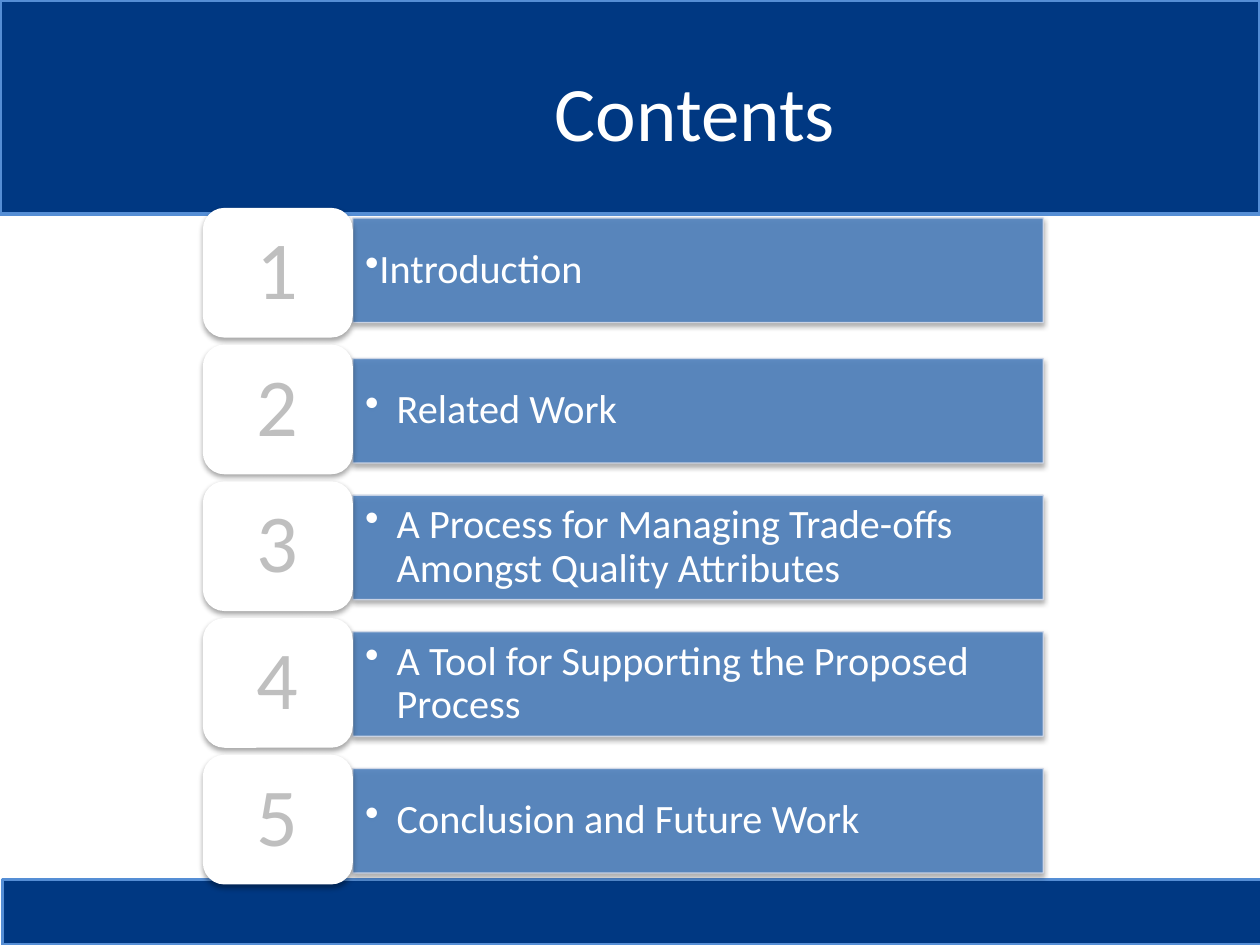
import pptx
import pptx.util
import pptx.dml.color
import pptx.enum.shapes
import pptx.enum.text
import pptx.oxml.ns
from lxml import etree

Inches = pptx.util.Inches
Pt = pptx.util.Pt
RGBColor = pptx.dml.color.RGBColor
SHAPE = pptx.enum.shapes.MSO_SHAPE
ALIGN = pptx.enum.text.PP_ALIGN
MIDDLE = pptx.enum.text.MSO_ANCHOR.MIDDLE
qn = pptx.oxml.ns.qn

NAVY = RGBColor(0x00, 0x38, 0x82)
SKY = RGBColor(0x55, 0x8E, 0xD5)
BLUE = RGBColor(0x4F, 0x81, 0xBD)
PALE = RGBColor(0xD0, 0xD8, 0xE8)
GRAY = RGBColor(0xBF, 0xBF, 0xBF)
WHITE = RGBColor(0xFF, 0xFF, 0xFF)

TITLE = "Contents"
# Topic, bullet indent, gap from the top of the tile to the top of the bar
TOPICS = [
    ("Introduction", 0, 0.08),
    ("Related Work", 0.25, 0.11),
    ("A Process for Managing Trade-offs Amongst Quality Attributes", 0.25, 0.11),
    ("A Tool for Supporting the Proposed Process", 0.25, 0.11),
    ("Conclusion and Future Work", 0.25, 0.11),
]
BANDS = [(0, 0, 10, 1.7), (0.02, 6.98, 10, 0.52)]

TILE_LEFT, TILE_TOP, TILE_WIDTH, TILE_HEIGHT = 1.61, 1.65, 1.19, 1.03
BAR_WIDTH, BAR_HEIGHT = 5.48, 0.83
PITCH = 1.085

TITLE_FONT = {"name": "Calibri", "size": Pt(44)}
BAR_FONT = {"name": "Calibri", "size": Pt(23)}
TILE_FONT = {"name": "Calibri", "size": Pt(47)}


def set_alpha(color_parent, percent):
    for color in color_parent.iter(qn("a:srgbClr")):
        etree.SubElement(color, qn("a:alpha"), val=str(percent * 1000))


def add_box(slide, kind, place, fill, line=None, width=0):
    box = slide.shapes.add_shape(kind, *[Inches(value) for value in place])
    box.fill.solid()
    box.fill.fore_color.rgb = fill
    if line is None:
        box.line.fill.background()
    else:
        box.line.color.rgb = line
        box.line.width = Pt(width)
    box.shadow.inherit = False
    return box


def add_soft_shadow(box):
    effects = box._element.spPr.find(qn("a:effectLst"))
    shadow = etree.SubElement(
        effects, qn("a:outerShdw"), blurRad=str(Pt(3.1)), dist=str(Pt(1.8)),
        dir="5400000", rotWithShape="0")
    etree.SubElement(shadow, qn("a:srgbClr"), val="000000")
    set_alpha(shadow, 35)


def write(box, text, font, color, align, side=0.1, edge=0.05, indent=None):
    """Fill a box with one paragraph, bulleted when an indent is given."""
    frame = box.text_frame
    frame.word_wrap = True
    frame.vertical_anchor = MIDDLE
    frame.margin_left = frame.margin_right = Inches(side)
    frame.margin_top = frame.margin_bottom = Inches(edge)
    para = frame.paragraphs[0]
    para.text = text
    if indent is not None:
        properties = para._p.get_or_add_pPr()
        properties.set("marL", str(Inches(indent)))
        properties.set("indent", str(-Inches(indent)))
        etree.SubElement(properties, qn("a:buChar"), char="•")
    para.alignment = align
    para.line_spacing = 0.9
    for name, value in font.items():
        setattr(para.font, name, value)
    para.font.color.rgb = color


def add_topic(slide, index, topic, indent, bar_gap):
    top = TILE_TOP + index * PITCH
    bar = add_box(slide, SHAPE.RECTANGLE,
                  (TILE_LEFT + TILE_WIDTH, top + bar_gap, BAR_WIDTH, BAR_HEIGHT),
                  BLUE, PALE, 0.75)
    set_alpha(bar._element.spPr, 90)
    add_soft_shadow(bar)
    write(bar, topic, BAR_FONT, WHITE, ALIGN.LEFT, indent=indent)

    tile = add_box(slide, SHAPE.ROUNDED_RECTANGLE,
                   (TILE_LEFT, top, TILE_WIDTH, TILE_HEIGHT), WHITE)
    add_soft_shadow(tile)
    write(tile, str(index + 1), TILE_FONT, GRAY, ALIGN.CENTER, side=0.2, edge=0.1)


def main():
    deck = pptx.Presentation()
    deck.slide_width, deck.slide_height = Inches(10), Inches(7.5)
    slide = deck.slides.add_slide(deck.slide_layouts[5])

    title = slide.shapes.title
    for band in BANDS:
        box = add_box(slide, SHAPE.RECTANGLE, band, NAVY, SKY, 2)
        title._element.addprevious(box._element)

    title.left, title.top = Inches(1.54), Inches(0.25)
    title.width, title.height = Inches(7.95), Inches(1.25)
    write(title, TITLE, TITLE_FONT, WHITE, ALIGN.CENTER)
    title.text_frame.paragraphs[0].line_spacing = 1.0

    for index, (topic, indent, bar_gap) in enumerate(TOPICS):
        add_topic(slide, index, topic, indent, bar_gap)

    deck.save("out.pptx")


if __name__ == "__main__":
    main()
